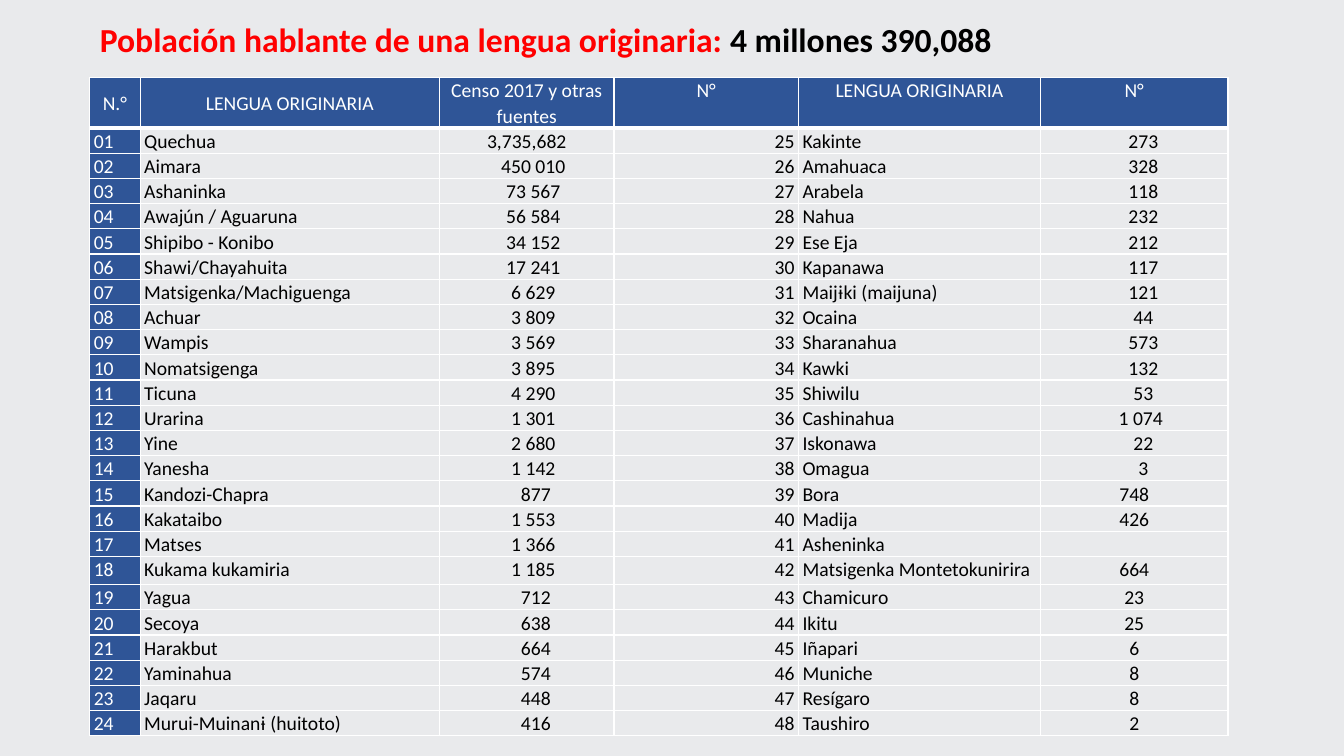
import pptx
import pptx.util
import pptx.dml.color
import pptx.enum.text
import pptx.oxml

TITLE = [("Población hablante de una lengua originaria: ", "red"), ("4 millones 390,088", "black")]
HEADER = ["N.°", "LENGUA ORIGINARIA", "Censo 2017 y otras fuentes", "N°", "LENGUA ORIGINARIA", "N°"]
LANGUAGES = [
    ("Quechua", "3,735,682", "Kakinte", "273"),
    ("Aimara", "450 010", "Amahuaca", "328"),
    ("Ashaninka", "73 567", "Arabela", "118"),
    ("Awajún / Aguaruna", "56 584", "Nahua", "232"),
    ("Shipibo - Konibo", "34 152", "Ese Eja", "212"),
    ("Shawi/Chayahuita", "17 241", "Kapanawa", "117"),
    ("Matsigenka/Machiguenga", "6 629", "Maijɨki (maijuna)", "121"),
    ("Achuar", "3 809", "Ocaina", "44"),
    ("Wampis", "3 569", "Sharanahua", "573"),
    ("Nomatsigenga", "3 895", "Kawki", "132"),
    ("Ticuna", "4 290", "Shiwilu", "53"),
    ("Urarina", "1 301", "Cashinahua", "1 074"),
    ("Yine", "2 680", "Iskonawa", "22"),
    ("Yanesha", "1 142", "Omagua", "3"),
    ("Kandozi-Chapra", "877", "Bora", "748"),
    ("Kakataibo", "1 553", "Madija", "426"),
    ("Matses", "1 366", "Asheninka", ""),
    ("Kukama kukamiria", "1 185", "Matsigenka Montetokunirira", "664"),
    ("Yagua", "712", "Chamicuro", "23"),
    ("Secoya", "638", "Ikitu", "25"),
    ("Harakbut", "664", "Iñapari", "6"),
    ("Yaminahua", "574", "Muniche", "8"),
    ("Jaqaru", "448", "Resígaro", "8"),
    ("Murui-Muinanɨ (huitoto)", "416", "Taushiro", "2"),
]
COLORS = {"page": "E9EAEC", "blue": "2F5597", "red": "FF0000", "black": "000000", "white": "FFFFFF"}
COLUMNS = [0.5, 2.97, 1.73, 1.83, 2.4, 1.86]
HEADER_HEIGHT, ROW_HEIGHT, TALL_ROW_HEIGHT, TALL_ROW = 0.3, 0.25, 0.28, 18
LEFT, TABLE_TOP = 0.89, 0.77
MARGIN, LONG_SHIFT, SHORT_SHIFT = 0.04, 0.13, 0.18
LAST_SHIFTED_ROW = 14

Inches, Pt = pptx.util.Inches, pptx.util.Pt
ALIGN, ANCHOR = pptx.enum.text.PP_ALIGN, pptx.enum.text.MSO_ANCHOR
ALIGNMENTS = [ALIGN.LEFT, ALIGN.LEFT, ALIGN.CENTER, ALIGN.RIGHT, ALIGN.LEFT, ALIGN.CENTER]


def rgb(name):
    return pptx.dml.color.RGBColor.from_string(COLORS[name])


def apply(target, formats):
    for name, value in formats.items():
        setattr(target, name, value)


def add_span(para, text, size, color, bold):
    span = para.add_run()
    span.text = text
    apply(span.font, {"name": "Calibri", "size": Pt(size), "bold": bold})
    span.font.color.rgb = rgb(color)


def add_title(page):
    box = page.shapes.title
    apply(box, {"left": Inches(LEFT), "top": Inches(0.14), "width": Inches(10.14), "height": Inches(0.5)})
    apply(box.text_frame, {"word_wrap": True, "vertical_anchor": ANCHOR.TOP,
                           "auto_size": pptx.enum.text.MSO_AUTO_SIZE.SHAPE_TO_FIT_TEXT})
    para = box.text_frame.paragraphs[0]
    para.alignment = ALIGN.LEFT
    for text, color in TITLE:
        add_span(para, text, 24, color, True)


def add_borders(cell, bottom):
    properties = cell._tc.get_or_add_tcPr()
    for index, (side, width) in enumerate([("L", 1), ("R", 1), ("T", 1), ("B", bottom)]):
        properties.insert(index, pptx.oxml.parse_xml(
            f'<a:ln{side} xmlns:a="http://schemas.openxmlformats.org/drawingml/2006/main" w="{Pt(width)}">'
            f'<a:solidFill><a:srgbClr val="{COLORS["white"]}"/></a:solidFill></a:ln{side}>'))


def value_shift(row, column, text):
    shifted = {2: "," not in text, 5: row <= LAST_SHIFTED_ROW}
    if row == 0 or not shifted.get(column):
        return 0
    return LONG_SHIFT if " " in text else SHORT_SHIFT


def fill_cell(cell, row, column, text):
    header = row == 0
    dark = header or column == 0
    if dark:
        cell.fill.solid()
        cell.fill.fore_color.rgb = rgb("blue")
    else:
        cell.fill.background()
    add_borders(cell, 3 if header else 1)
    apply(cell, {"margin_left": Inches(MARGIN + value_shift(row, column, text)),
                 "margin_right": Inches(MARGIN), "margin_top": 0, "margin_bottom": 0,
                 "vertical_anchor": ANCHOR.MIDDLE if header and column < 3 else ANCHOR.TOP})
    para = cell.text_frame.paragraphs[0]
    apply(para, {"alignment": ALIGN.CENTER if header else ALIGNMENTS[column], "line_spacing": 1.07})
    if text:
        add_span(para, text, 14, "white" if dark else "black", False)
    else:
        para._p.append(pptx.oxml.parse_xml(
            '<a:endParaRPr xmlns:a="http://schemas.openxmlformats.org/drawingml/2006/main" sz="1400"/>'))


def add_language_table(page):
    half = len(LANGUAGES)
    rows = [HEADER] + [
        [f"{number:02}", first, speakers, str(number + half), second, others]
        for number, (first, speakers, second, others) in enumerate(LANGUAGES, 1)]
    heights = [HEADER_HEIGHT] + [ROW_HEIGHT] * half
    heights[TALL_ROW] = TALL_ROW_HEIGHT
    table = page.shapes.add_table(len(rows), len(COLUMNS), Inches(LEFT), Inches(TABLE_TOP),
                                  Inches(sum(COLUMNS)), Inches(sum(heights))).table
    apply(table, {"first_row": False, "horz_banding": False})
    for column, width in zip(table.columns, COLUMNS):
        column.width = Inches(width)
    for row, (texts, height) in enumerate(zip(rows, heights)):
        table.rows[row].height = Inches(height)
        for column, text in enumerate(texts):
            fill_cell(table.cell(row, column), row, column, text)


def main():
    deck = pptx.Presentation()
    apply(deck, {"slide_width": Inches(13.33), "slide_height": Inches(7.5)})
    page = deck.slides.add_slide(deck.slide_layouts[5])
    page.background.fill.solid()
    page.background.fill.fore_color.rgb = rgb("page")
    add_title(page)
    add_language_table(page)
    deck.save("out.pptx")


if __name__ == "__main__":
    main()
